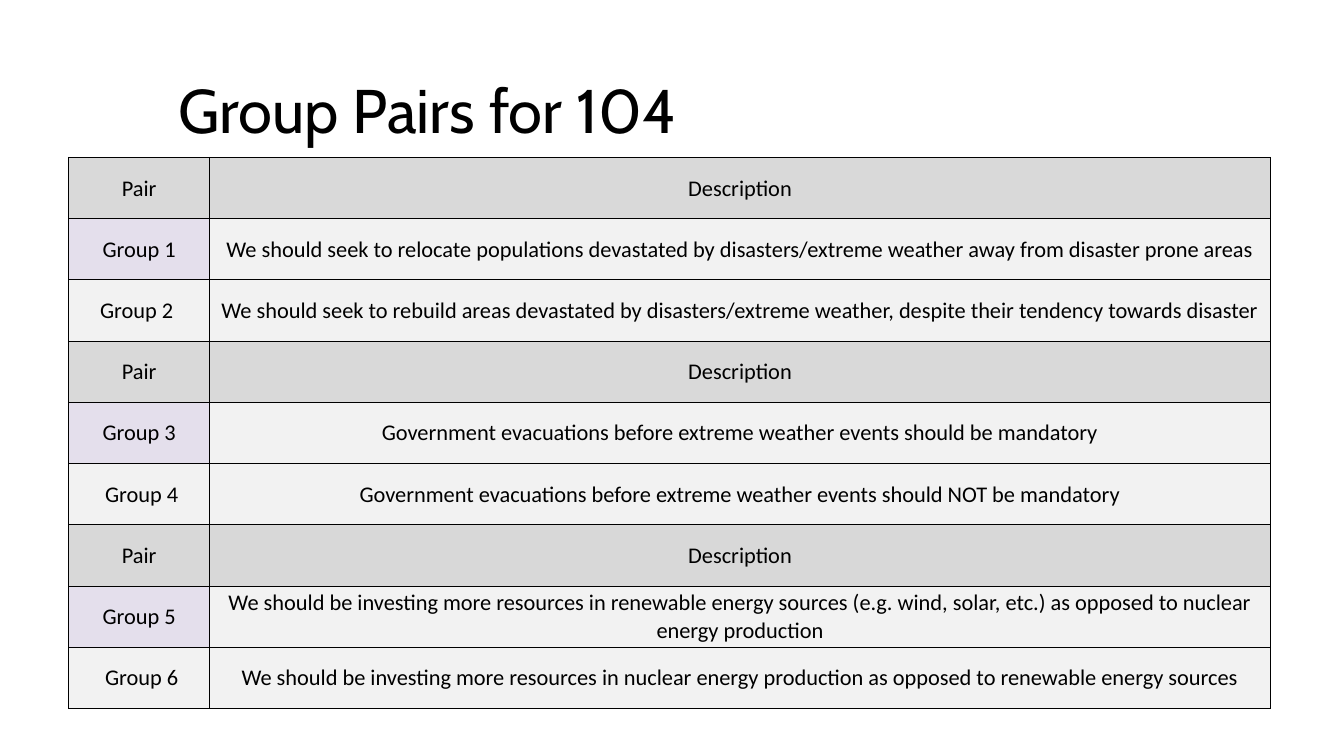
from lxml import etree
from pptx import Presentation
from pptx.dml.color import RGBColor
from pptx.enum.text import MSO_ANCHOR, PP_ALIGN
from pptx.oxml.ns import qn
from pptx.util import Inches, Pt

MIDDLE = MSO_ANCHOR.MIDDLE
LEFT, CENTER = PP_ALIGN.LEFT, PP_ALIGN.CENTER

THEME = {
    "text": "000000",
    "border": "000000",
    "headers": ["D9D9D9", "D9D9D9", "D8D8D8"],
    "first_group": "E4DFEC",
    "body": "F2F2F2",
    "title_font": {"name": "Cabin", "size": Pt(44), "bold": False},
    "table_font": {"name": "Calibri", "size": Pt(16), "bold": False},
}
CELL_FORMAT = {
    "vertical_anchor": MIDDLE,
    "margin_left": Inches(0.01),
    "margin_right": Inches(0.01),
    "margin_top": Inches(0.01),
    "margin_bottom": 0,
}

# Each pair of groups argues the two sides of one topic
PAIRS = [
    [("Group 1", "We should seek to relocate populations devastated by "
      "disasters/extreme weather away from disaster prone areas"),
     ("Group 2 ", "We should seek to rebuild areas devastated by "
      "disasters/extreme weather, despite their tendency towards disaster")],
    [("Group 3", "Government evacuations before extreme weather events "
      "should be mandatory"),
     (" Group 4", "Government evacuations before extreme weather events "
      "should NOT be mandatory")],
    [("Group 5", "We should be investing more resources in renewable energy "
      "sources (e.g. wind, solar, etc.) as opposed to nuclear energy production"),
     (" Group 6", "We should be investing more resources in nuclear energy "
      "production as opposed to renewable energy sources")],
]


def write(tf, text, font, align):
    p = tf.paragraphs[0]
    p.alignment = align
    r = p.add_run()
    r.text = text
    for name, value in font.items():
        setattr(r.font, name, value)
    r.font.color.rgb = RGBColor.from_string(THEME["text"])
    return p


def add_borders(cell):
    tcPr = cell._tc.get_or_add_tcPr()
    for i, side in enumerate(("a:lnL", "a:lnR", "a:lnT", "a:lnB")):
        ln = etree.Element(qn(side), w=str(Pt(0.5)))
        fill = etree.SubElement(ln, qn("a:solidFill"))
        etree.SubElement(fill, qn("a:srgbClr"), val=THEME["border"])
        tcPr.insert(i, ln)


prs = Presentation()
prs.slide_width, prs.slide_height = Inches(13.33), Inches(7.5)
slide = prs.slides.add_slide(prs.slide_layouts[5])

# Title
title = slide.shapes.title
title.left, title.top = Inches(1.67), Inches(0.4)
title.width, title.height = Inches(6.48), Inches(1.45)
tf = title.text_frame
tf.vertical_anchor = MIDDLE
p = write(tf, "Group Pairs for 104", THEME["title_font"], LEFT)
p.line_spacing = 0.9

# Table rows: a header and two groups for every pair
rows = []
for header, (first, second) in zip(THEME["headers"], PAIRS):
    rows += [
        (("Pair", "Description"), (header, header)),
        (first, (THEME["first_group"], THEME["body"])),
        (second, (THEME["body"], THEME["body"])),
    ]

# Table
table = slide.shapes.add_table(len(rows), 2, Inches(0.68), Inches(1.56),
                               Inches(11.92), Inches(5.47)).table
table.first_row = table.horz_banding = False
for column, width in zip(table.columns, (1.4, 10.52)):
    column.width = Inches(width)

for i, (texts, fills) in enumerate(rows):
    for j, (text, color) in enumerate(zip(texts, fills)):
        cell = table.cell(i, j)
        for name, value in CELL_FORMAT.items():
            setattr(cell, name, value)
        cell.fill.solid()
        cell.fill.fore_color.rgb = RGBColor.from_string(color)
        add_borders(cell)
        write(cell.text_frame, text, THEME["table_font"], CENTER)

prs.save("out.pptx")
